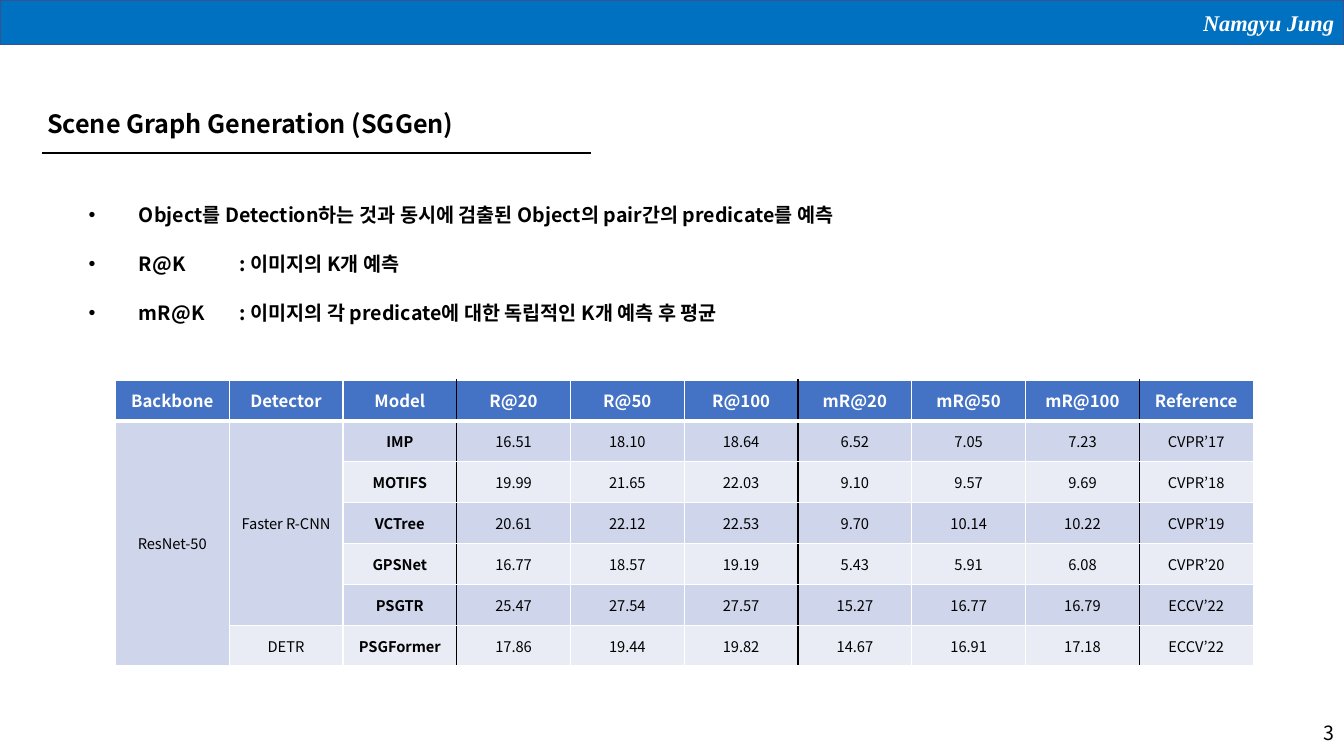
"""Builds the slide on scene graph generation with its benchmark table."""
from lxml import etree
from pptx import Presentation
from pptx.dml.color import RGBColor
from pptx.enum.shapes import MSO_CONNECTOR, MSO_SHAPE
from pptx.enum.text import MSO_ANCHOR, PP_ALIGN
from pptx.oxml.ns import qn
from pptx.util import Pt

STRAIGHT = MSO_CONNECTOR.STRAIGHT
RECTANGLE = MSO_SHAPE.RECTANGLE
TOP, MIDDLE = MSO_ANCHOR.TOP, MSO_ANCHOR.MIDDLE
LEFT, CENTER, RIGHT = PP_ALIGN.LEFT, PP_ALIGN.CENTER, PP_ALIGN.RIGHT

BLACK = RGBColor(0x00, 0x00, 0x00)
WHITE = RGBColor(0xFF, 0xFF, 0xFF)
BANNER_BLUE = RGBColor(0x00, 0x70, 0xC0)
BANNER_EDGE = RGBColor(0x32, 0x54, 0x91)
HEADER_BLUE = RGBColor(0x44, 0x72, 0xC4)
BAND_DARK = RGBColor(0xCF, 0xD5, 0xEA)
BAND_LIGHT = RGBColor(0xE9, 0xEB, 0xF5)

DEFINITIONS = [
    "Object를 Detection하는 것과 동시에 검출된 Object의 pair간의 predicate를 예측",
    "R@K \t: 이미지의 K개 예측",
    "mR@K\t: 이미지의 각 predicate에 대한 독립적인 K개 예측 후 평균",
]
RESULTS = [
    ["Backbone", "Detector", "Model", "R@20", "R@50", "R@100",
     "mR@20", "mR@50", "mR@100", "Reference"],
    ["ResNet-50", "Faster R-CNN", "IMP", "16.51", "18.10", "18.64",
     "6.52", "7.05", "7.23", "CVPR’17"],
    ["", "", "MOTIFS", "19.99", "21.65", "22.03", "9.10", "9.57", "9.69", "CVPR’18"],
    ["", "", "VCTree", "20.61", "22.12", "22.53", "9.70", "10.14", "10.22", "CVPR’19"],
    ["", "", "GPSNet", "16.77", "18.57", "19.19", "5.43", "5.91", "6.08", "CVPR’20"],
    ["", "", "PSGTR", "25.47", "27.54", "27.57", "15.27", "16.77", "16.79", "ECCV’22"],
    ["", "DETR", "PSGFormer", "17.86", "19.44", "19.82", "14.67", "16.91", "17.18", "ECCV’22"],
]
MERGES = [((1, 0), (6, 0)), ((1, 1), (5, 1))]
MODEL_COLUMN = 2
GROUP_ENDS = (2, 5, 8)


class SlideBuilder:
    """Holds the slide and its fonts and draws each kind of element."""

    body_font = "Noto Sans CJK KR"
    banner_font = "Times New Roman"

    def __init__(self, slide):
        self.slide = slide

    def style(self, paragraph, size, color=BLACK, bold=False, italic=False,
              align=LEFT, font=body_font):
        paragraph.alignment = align
        for run in paragraph.runs:
            run.font.size = Pt(size)
            run.font.bold = bold
            run.font.italic = italic
            run.font.color.rgb = color
            run.font.name = font
            east_asian = etree.SubElement(run.font._element, qn("a:ea"))
            east_asian.set("typeface", font)

    def banner(self, name, width, height):
        bar = self.slide.shapes.add_shape(RECTANGLE, Pt(0), Pt(0), Pt(width), Pt(height))
        bar.shadow.inherit = False
        bar.fill.solid()
        bar.fill.fore_color.rgb = BANNER_BLUE
        bar.line.color.rgb = BANNER_EDGE
        bar.line.width = Pt(1)
        bar.text_frame.text = name
        bar.text_frame.vertical_anchor = MIDDLE
        self.style(bar.text_frame.paragraphs[0], 16, WHITE, True, True, RIGHT,
                   self.banner_font)

    def rule(self, left, right, y):
        line = self.slide.shapes.add_connector(STRAIGHT, Pt(left), Pt(y), Pt(right), Pt(y))
        line.line.color.rgb = BLACK
        line.line.width = Pt(1.5)
        etree.SubElement(line._element.spPr, qn("a:effectLst"))

    def text(self, content, left, top, width, height, size, bold=False,
             align=LEFT, anchor=MIDDLE):
        box = self.slide.shapes.add_textbox(Pt(left), Pt(top), Pt(width), Pt(height))
        frame = box.text_frame
        frame.word_wrap = True
        frame.vertical_anchor = anchor
        frame.text = content
        for paragraph in frame.paragraphs:
            self.style(paragraph, size, bold=bold, align=align)
        return frame

    def bullets(self, items, left, top, width, height):
        frame = self.text("\n".join(items), left, top, width, height, 14, True, anchor=TOP)
        for paragraph in frame.paragraphs:
            paragraph.line_spacing = Pt(25)
            paragraph.space_before = Pt(10)
            properties = paragraph._p.get_or_add_pPr()
            properties.set("marL", str(Pt(36)))
            properties.set("indent", str(Pt(-36)))
            etree.SubElement(properties, qn("a:buFont")).set("typeface", "Arial")
            etree.SubElement(properties, qn("a:buChar")).set("char", "•")

    def border(self, cell, side, color, width):
        edge = etree.SubElement(cell._tc.get_or_add_tcPr(), qn(f"a:ln{side}"))
        edge.set("w", str(Pt(width)))
        fill = etree.SubElement(edge, qn("a:solidFill"))
        etree.SubElement(fill, qn("a:srgbClr")).set("val", str(color))

    def cell(self, cell, content, row, column):
        header = row == 0
        self.border(cell, "L", BLACK if column - 1 in GROUP_ENDS else WHITE, 1)
        self.border(cell, "R", BLACK if column in GROUP_ENDS else WHITE, 1)
        self.border(cell, "T", WHITE, 3 if row == 1 else 1)
        self.border(cell, "B", WHITE, 3 if header else 1)
        cell.fill.solid()
        band = BAND_DARK if row % 2 else BAND_LIGHT
        cell.fill.fore_color.rgb = HEADER_BLUE if header else band
        cell.vertical_anchor = MIDDLE
        cell.text_frame.text = content
        self.style(cell.text_frame.paragraphs[0], 12 if header else 10.5,
                   WHITE if header else BLACK, header or column == MODEL_COLUMN,
                   align=CENTER)

    def table(self, rows, merges, left, top, column_width, row_height):
        columns = len(rows[0])
        grid = self.slide.shapes.add_table(
            len(rows), columns, Pt(left), Pt(top),
            Pt(column_width * columns), Pt(row_height * len(rows))).table
        for grid_column in grid.columns:
            grid_column.width = Pt(column_width)
        for grid_row in grid.rows:
            grid_row.height = Pt(row_height)
        for row, values in enumerate(rows):
            for column, value in enumerate(values):
                self.cell(grid.cell(row, column), value, row, column)
        for first, last in merges:
            grid.cell(*first).merge(grid.cell(*last))


def main():
    deck = Presentation()
    deck.slide_width, deck.slide_height = Pt(960), Pt(540)
    builder = SlideBuilder(deck.slides.add_slide(deck.slide_layouts[6]))
    builder.banner("Namgyu Jung", 960, 32)
    builder.rule(30, 422, 109.5)
    builder.text("Scene Graph Generation (SGGen)", 26.6, 67.5, 828, 42, 18, True)
    builder.text("3", 744, 509, 216, 29, 14, align=RIGHT)
    builder.table(RESULTS, MERGES, 82.4, 271.4, 81.29, 29.2)
    builder.bullets(DEFINITIONS, 56.2, 133.2, 828, 342.7)
    deck.save("out.pptx")


if __name__ == "__main__":
    main()
